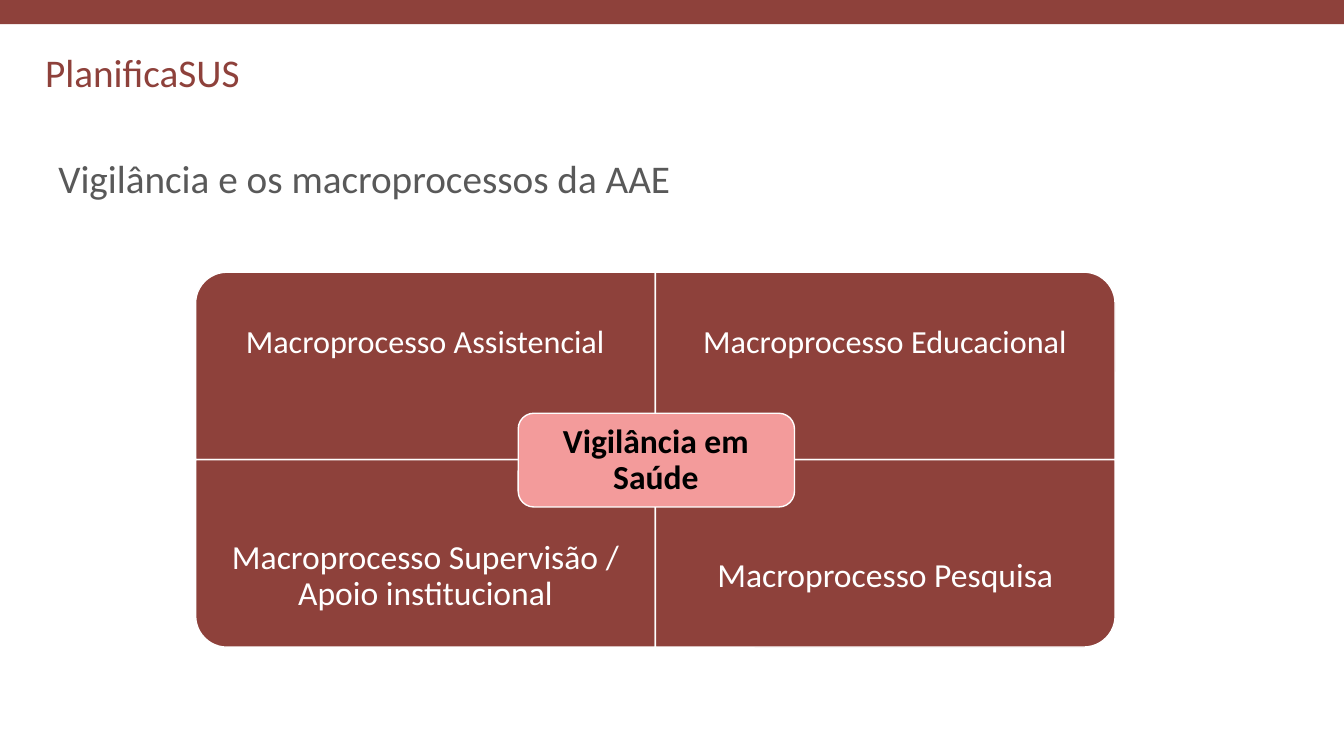
from pptx import Presentation
from pptx.dml.color import RGBColor
from pptx.enum.shapes import MSO_SHAPE
from pptx.enum.text import MSO_ANCHOR, PP_ALIGN
from pptx.util import Emu, Pt

PX = 9144
WINE, PINK, GRAY, WHITE, BLACK = "8E413B", "F39B9B", "595959", "FFFFFF", "000000"


def add_text(text, left, top, width, height, size=24, color=WHITE, bold=False,
             align=PP_ALIGN.CENTER, anchor=MSO_ANCHOR.MIDDLE, inset=(10, 5),
             spacing=0.9, wrap=True):
    box = page.shapes.add_textbox(*[Emu(n * PX) for n in (left, top, width, height)])
    frame = box.text_frame
    frame.word_wrap = wrap
    frame.vertical_anchor = anchor
    frame.margin_left = frame.margin_right = Emu(inset[0] * PX)
    frame.margin_top = frame.margin_bottom = Emu(inset[1] * PX)
    para = frame.paragraphs[0]
    para.alignment = align
    para.line_spacing = spacing
    span = para.add_run()
    span.text = text
    span.font.name = "Calibri"
    span.font.size = Pt(size)
    span.font.bold = bold
    span.font.color.rgb = RGBColor.from_string(color)


def add_panel(kind, left, top, width, height, fill, outlined=True):
    panel = page.shapes.add_shape(kind, *[Emu(round(n * PX)) for n in (left, top, width, height)])
    panel.shadow.inherit = False
    panel.fill.solid()
    panel.fill.fore_color.rgb = RGBColor.from_string(fill)
    if outlined:
        panel.line.color.rgb = RGBColor.from_string(WHITE)
        panel.line.width = Pt(1)
    else:
        panel.line.fill.background()
    return panel


deck = Presentation()
deck.slide_width = Emu(1333 * PX)
deck.slide_height = Emu(750 * PX)
page = deck.slides.add_slide(deck.slide_layouts[6])

add_text("PlanificaSUS", 35, 43, 215, 57, size=28, color=WINE, align=PP_ALIGN.LEFT,
         anchor=MSO_ANCHOR.TOP, spacing=1.0, wrap=False)
add_panel(MSO_SHAPE.RECTANGLE, 0, 0, 1333, 24, WINE, outlined=False)
add_text("Vigilância e os macroprocessos da AAE", 48, 107, 1099, 145, size=28,
         color=GRAY, align=PP_ALIGN.LEFT)

GRID_LEFT, GRID_TOP, CELL_WIDTH, CELL_HEIGHT, LABEL_HEIGHT = 194, 270, 456, 186, 140
quadrants = [
    ("Macroprocesso Assistencial", 0, 0, 270, 23, 18),
    ("Macroprocesso Educacional", 1, 0, 0, 23, 18),
    ("Macroprocesso Supervisão / Apoio institucional", 0, 1, 180, 24, 19),
    ("Macroprocesso Pesquisa", 1, 1, 90, 24, 19),
]
for label, column, row, rotation, size, inset in quadrants:
    left = GRID_LEFT + column * CELL_WIDTH
    top = GRID_TOP + row * CELL_HEIGHT
    width, height = CELL_WIDTH, CELL_HEIGHT
    if rotation in (90, 270):
        width, height = height, width
    quadrant = add_panel(MSO_SHAPE.ROUND_1_RECTANGLE, left + (CELL_WIDTH - width) / 2,
                         top + (CELL_HEIGHT - height) / 2, width, height, WINE)
    quadrant.rotation = rotation
    label_top = top + row * (CELL_HEIGHT - LABEL_HEIGHT)
    add_text(label, left, label_top, CELL_WIDTH, LABEL_HEIGHT, size=size, inset=(inset, inset))

add_panel(MSO_SHAPE.ROUNDED_RECTANGLE, 514, 410, 274, 93, PINK)
add_text("Vigilância em Saúde", 518, 415, 265, 84, color=BLACK, bold=True, inset=(10, 10))

deck.save("out.pptx")
